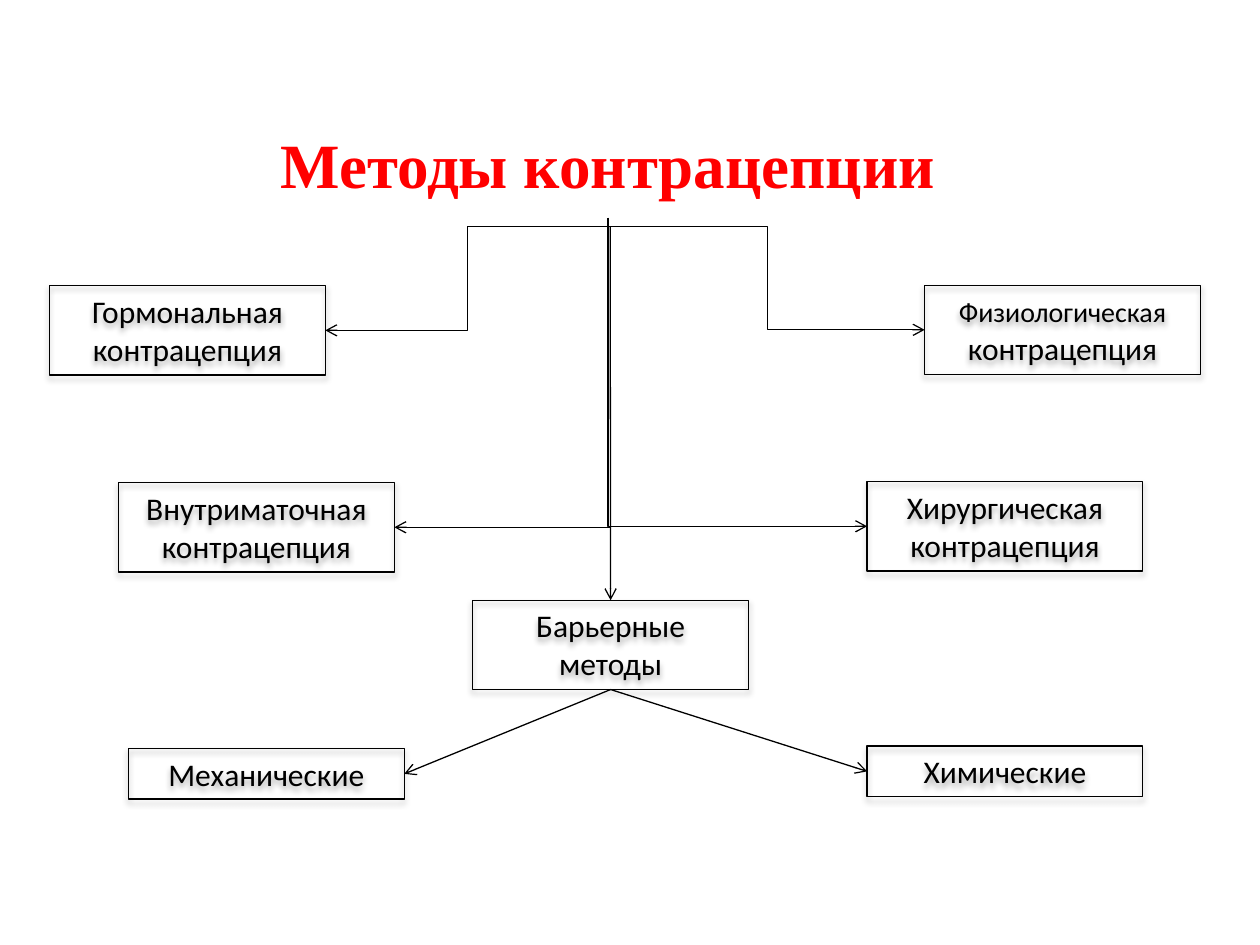
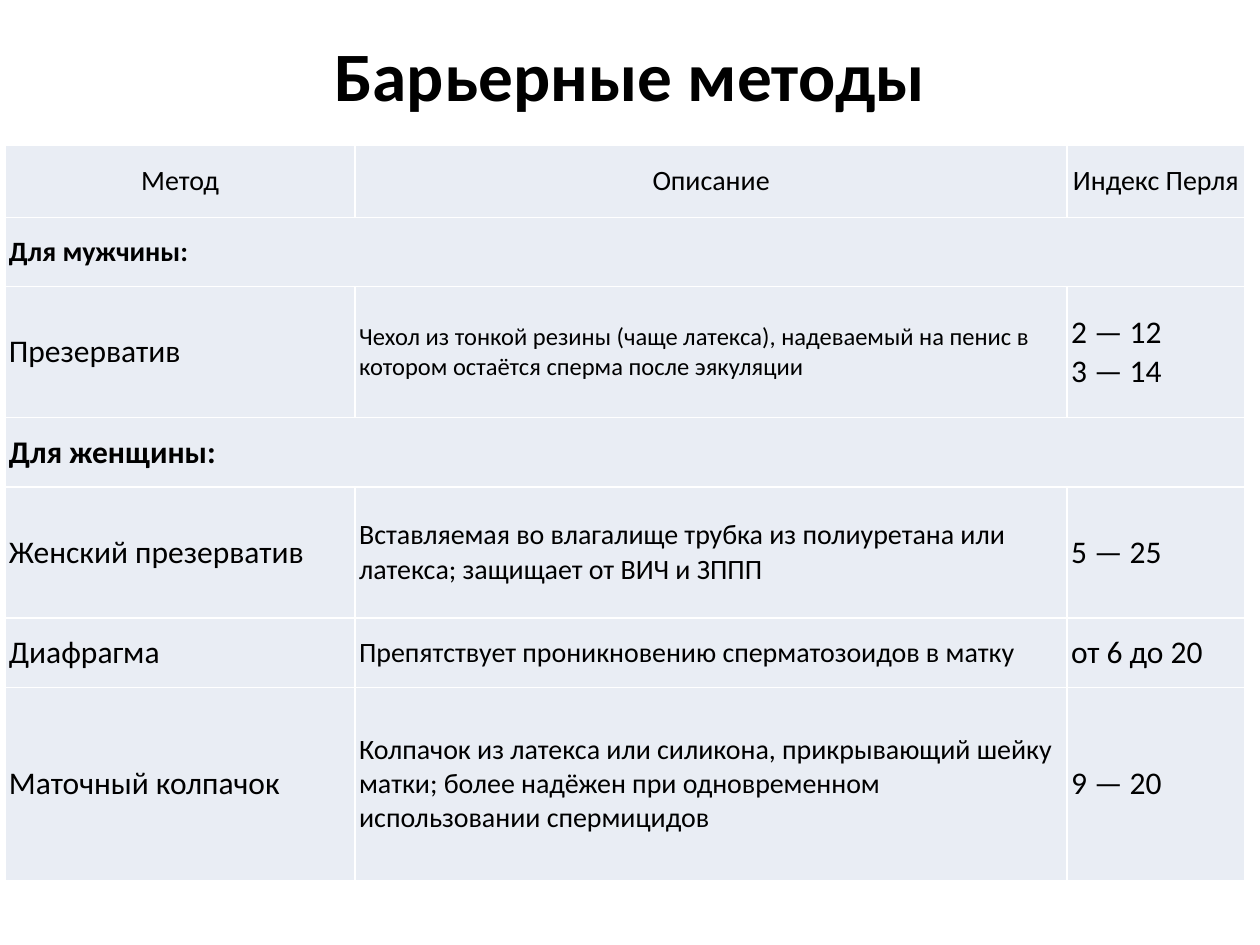
from lxml import etree
from pptx import Presentation
from pptx.dml.color import RGBColor
from pptx.enum.shapes import MSO_CONNECTOR as Connector, MSO_SHAPE as Preset
from pptx.enum.text import MSO_ANCHOR as Anchor, PP_ALIGN as Align
from pptx.oxml import parse_xml
from pptx.oxml.ns import nsdecls, qn
from pptx.util import Cm, Pt

BLACK, RED, WHITE, CELL_FILL = "000000", "FF0000", "FFFFFF", "E9EDF4"
BODY_FONT, TITLE_FONT = "Calibri", "Times New Roman"

METHODS_TITLE = "Методы контрацепции"
METHODS_TITLE_BOX = (2.97, 2.18, 18.57, 2.21)
BOX_WIDTH, TALL, LOW = 5.56, 1.8, 1.02
# name: (left, top, height, [(text, size), ...])
METHODS = {
    "hormonal": (1, 5.76, TALL, [("Гормональная контрацепция", 18)]),
    "intrauterine": (2.39, 9.73, TALL, [("Внутриматочная контрацепция", 18)]),
    "barrier": (9.53, 12.1, TALL, [("Барьерные методы", 18)]),
    "mechanical": (2.59, 15.09, LOW, [("Механические", 18)]),
    "chemical": (17.48, 15.04, LOW, [("Химические", 18)]),
    "physiological": (18.64, 5.75, TALL,
                      [("Физиологическая", 16), (" контрацепция", 18)]),
    "surgical": (17.48, 9.71, TALL, [("Хирургическая контрацепция", 18)]),
}
TRUNK = (12.3, 4.57)
TITLE_BOTTOM = (12.26, 4.39)
TOP, LEFT, BOTTOM, RIGHT = range(4)
# start, method, side reached, number of bends
ELBOWS = [
    (TRUNK, "hormonal", RIGHT, 2),
    (TRUNK, "physiological", LEFT, 2),
    (TRUNK, "intrauterine", RIGHT, 1),
    (TITLE_BOTTOM, "surgical", LEFT, 1),
]
BARRIER_KINDS = [("mechanical", RIGHT), ("chemical", LEFT)]

BARRIER_TITLE = "Барьерные методы"
BARRIER_TITLE_BOX = (1.27, 0.66, 22.86, 3.18)
TABLE_ORIGIN = (0.1, 2.93)
COLUMN_WIDTHS = (7.06, 14.35, 3.58)
# height, cells as (text, size); a single cell is a section heading
TABLE_ROWS = [
    (1.45, [("Метод", 16), ("Описание", 16), ("Индекс Перля", 16)]),
    (1.4, [("Для мужчины:", 16)]),
    (2.64, [("Презерватив", 18),
            ("Чехол из тонкой резины (чаще латекса), надеваемый на пенис в "
             "котором остаётся сперма после эякуляции", 14),
            ("2 — 12\v3 — 14", 18)]),
    (1.4, [("Для женщины:", 18)]),
    (2.64, [("Женский презерватив", 18),
            ("Вставляемая во влагалище трубка из полиуретана или латекса; "
             "защищает от ВИЧ и ЗППП", 16),
            ("5 — 25", 18)]),
    (1.4, [("Диафрагма", 18),
           ("Препятствует проникновению сперматозоидов в матку", 16),
           ("от 6 до 20", 18)]),
    (3.89, [("Маточный колпачок", 18),
            ("Колпачок из латекса или силикона, прикрывающий шейку матки; "
             "более надёжен при одновременном использовании спермицидов", 16),
            ("9 — 20", 18)]),
]


def rgb(value):
    return RGBColor.from_string(value)


def set_all(target, values):
    for name, value in values.items():
        setattr(target, name, value)


def write(paragraph, runs, align=Align.LEFT, color=BLACK, font=BODY_FONT,
          bold=False):
    """Fill a paragraph with (text, size) runs of one style."""
    paragraph.alignment = align
    for text, size in runs:
        for index, line in enumerate(text.split("\v")):
            if index:
                paragraph.add_line_break()
            run = paragraph.add_run()
            run.text = line
            set_all(run.font, {"size": Pt(size), "name": font, "bold": bold})
            run.font.color.rgb = rgb(color)


def add_title(slide, box, text, size, anchor, **style):
    frame = slide.shapes.add_textbox(*map(Cm, box)).text_frame
    set_all(frame, {"word_wrap": True, "vertical_anchor": anchor})
    if anchor == Anchor.TOP:
        frame.margin_top = 0
    write(frame.paragraphs[0], [(text, size)], Align.CENTER, bold=True, **style)


def set_line(line):
    line.color.rgb = rgb(BLACK)
    line.width = Pt(0.75)


def add_method(slide, left, top, height, runs):
    shape = slide.shapes.add_shape(
        Preset.RECTANGLE, Cm(left), Cm(top), Cm(BOX_WIDTH), Cm(height))
    shape.fill.background()
    set_line(shape.line)
    shape.shadow.inherit = False
    effects = shape._element.spPr.find(qn("a:effectLst"))
    effects.append(parse_xml(
        f'<a:outerShdw {nsdecls("a")} blurRad="44450" dist="27940" '
        'dir="5400000" algn="ctr" rotWithShape="0"><a:srgbClr val="000000">'
        '<a:alpha val="32000"/></a:srgbClr></a:outerShdw>'))
    frame = shape.text_frame
    set_all(frame, {"word_wrap": True, "vertical_anchor": Anchor.TOP})
    write(frame.paragraphs[0], runs, Align.CENTER)
    return shape


def side_middle(shape, side):
    x = {LEFT: 0, RIGHT: shape.width}.get(side, shape.width // 2)
    y = {TOP: 0, BOTTOM: shape.height}.get(side, shape.height // 2)
    return shape.left + x, shape.top + y


def add_arrow(slide, kind, start, end):
    arrow = slide.shapes.add_connector(kind, *start, *end)
    set_line(arrow.line)
    etree.SubElement(arrow.line._get_or_add_ln(), qn("a:tailEnd"), type="arrow")
    etree.SubElement(arrow._element.spPr, qn("a:effectLst"))
    return arrow


def make_single_bend(arrow, start, end):
    """Turn an elbow into one that runs down first, then sideways."""
    across, down = end[0] - start[0], end[1] - start[1]
    properties = arrow._element.spPr
    properties.find(qn("a:prstGeom")).set("prst", "bentConnector2")
    frame = properties.find(qn("a:xfrm"))
    for name in ("flipH", "flipV"):
        frame.attrib.pop(name, None)
    frame.set("rot", "5400000" if across < 0 else "16200000")
    if across > 0:
        frame.set("flipH", "1")
    width, height = down, abs(across)
    set_all(arrow, {
        "left": (start[0] + end[0] - width) // 2,
        "top": (start[1] + end[1] - height) // 2,
        "width": width, "height": height})


def build_methods(slide):
    add_title(slide, METHODS_TITLE_BOX, METHODS_TITLE, 36, Anchor.MIDDLE,
              color=RED, font=TITLE_FONT)
    boxes = {name: add_method(slide, *method)
             for name, method in METHODS.items()}
    for origin, name, side, bends in ELBOWS:
        start, end = tuple(map(Cm, origin)), side_middle(boxes[name], side)
        arrow = add_arrow(slide, Connector.ELBOW, start, end)
        if bends == 1:
            make_single_bend(arrow, start, end)
    barrier = boxes["barrier"]
    trunk = add_arrow(slide, Connector.STRAIGHT, tuple(map(Cm, TRUNK)),
                      side_middle(barrier, TOP))
    trunk.end_connect(barrier, TOP)
    for name, side in BARRIER_KINDS:
        arrow = add_arrow(slide, Connector.STRAIGHT,
                          side_middle(barrier, BOTTOM),
                          side_middle(boxes[name], side))
        arrow.begin_connect(barrier, BOTTOM)
        arrow.end_connect(boxes[name], side)


def style_cell(cell):
    cell.fill.solid()
    cell.fill.fore_color.rgb = rgb(CELL_FILL)
    set_all(cell, {
        "vertical_anchor": Anchor.MIDDLE,
        "margin_left": Cm(0.08), "margin_right": Cm(0.08),
        "margin_top": Cm(0.03), "margin_bottom": Cm(0.03)})
    properties = cell._tc.get_or_add_tcPr()
    for index, edge in enumerate(("lnL", "lnR", "lnT", "lnB")):
        properties.insert(index, parse_xml(
            f'<a:{edge} {nsdecls("a")} w="12700"><a:solidFill>'
            f'<a:srgbClr val="{WHITE}"/></a:solidFill></a:{edge}>'))


def build_barrier_table(slide):
    add_title(slide, BARRIER_TITLE_BOX, BARRIER_TITLE, 39.6, Anchor.TOP)
    heights = [height for height, _ in TABLE_ROWS]
    size = (sum(COLUMN_WIDTHS), sum(heights))
    table = slide.shapes.add_table(
        len(heights), len(COLUMN_WIDTHS), *map(Cm, TABLE_ORIGIN + size)).table
    for column, width in zip(table.columns, COLUMN_WIDTHS):
        column.width = Cm(width)
    for row, (height, cells) in enumerate(TABLE_ROWS):
        table.rows[row].height = Cm(height)
        for cell in table.rows[row].cells:
            style_cell(cell)
        is_section = len(cells) == 1
        if is_section:
            table.cell(row, 0).merge(table.cell(row, len(COLUMN_WIDTHS) - 1))
        for column, content in enumerate(cells):
            paragraph = table.cell(row, column).text_frame.paragraphs[0]
            write(paragraph, [content], Align.LEFT if row else Align.CENTER,
                  bold=is_section)


def main():
    presentation = Presentation()
    set_all(presentation, {"slide_width": Cm(25.4), "slide_height": Cm(19.05)})
    for build in (build_methods, build_barrier_table):
        build(presentation.slides.add_slide(presentation.slide_layouts[6]))
    presentation.save("out.pptx")


if __name__ == "__main__":
    main()
